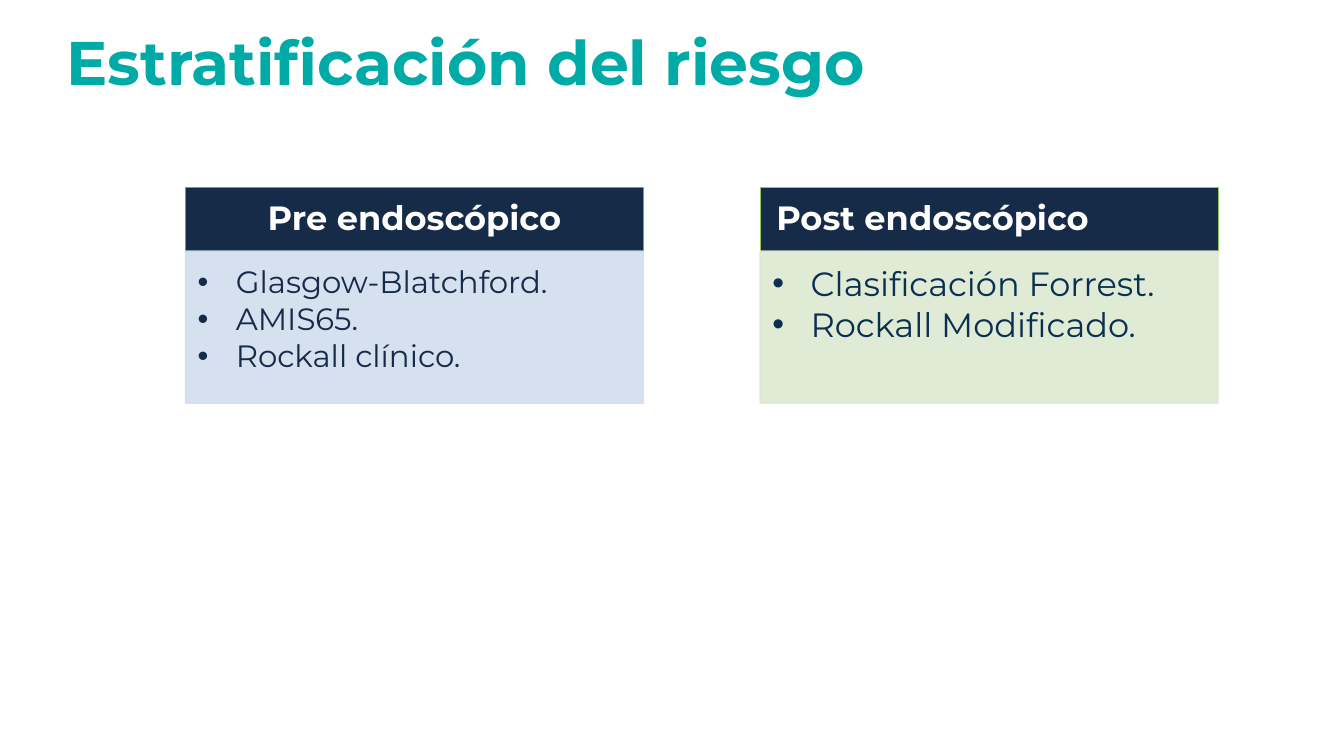
from lxml import etree
from pptx import Presentation, util as u
from pptx.dml.color import RGBColor
from pptx.enum import text as t
from pptx.oxml.ns import qn

TEAL = RGBColor(0x00, 0xAA, 0xA7)
NAVY = RGBColor(0x15, 0x2B, 0x48)
INK = RGBColor(0x0B, 0x2F, 0x51)
WHITE = RGBColor(0xFF, 0xFF, 0xFF)
BLUE = RGBColor(0x5B, 0x9B, 0xD5)
GREEN = RGBColor(0x95, 0xC5, 0x57)
SKY = RGBColor(0xD2, 0xDE, 0xEF)
MINT = RGBColor(0xDC, 0xE9, 0xD1)
LEFT, MID = t.PP_ALIGN.LEFT, t.PP_ALIGN.CENTER


def bullet(para):
    props = para._p.get_or_add_pPr()
    props.set("marL", str(u.Inches(0.38)))
    props.set("indent", str(-u.Inches(0.38)))
    etree.SubElement(props, qn("a:buFont")).set("typeface", "Arial")
    etree.SubElement(props, qn("a:buChar")).set("char", "•")


def write(frame, *lines, size=24, color=NAVY, bold=False, align=LEFT,
          space=1.0, anchor=t.MSO_ANCHOR.MIDDLE, pads=(0.1, 0.05, 0.1, 0.05),
          dots=False):
    frame.word_wrap = True
    frame.auto_size = t.MSO_AUTO_SIZE.NONE
    frame.vertical_anchor = anchor
    (frame.margin_left, frame.margin_top,
     frame.margin_right, frame.margin_bottom) = map(u.Inches, pads)
    for i, line in enumerate(lines):
        para = frame.paragraphs[0] if i == 0 else frame.add_paragraph()
        if dots:
            bullet(para)
        para.alignment, para.line_spacing = align, space
        para.space_before = u.Pt(0)
        run = para.add_run()
        run.text = line
        font = run.font
        font.name, font.size, font.bold = "Montserrat", u.Pt(size), bold
        font.color.rgb = color


class Deck:
    """Places the layout's placeholders by percent of the slide."""

    def __init__(self):
        self.prs = Presentation()
        self.prs.slide_width = u.Inches(13.33)
        self.prs.slide_height = u.Inches(7.5)
        # Comparison layout: a title, two headings and two lists
        self.slide = self.prs.slides.add_slide(self.prs.slide_layouts[4])

    def place(self, idx, x, y, w, h):
        item = self.slide.placeholders[idx]
        wide, high = self.prs.slide_width, self.prs.slide_height
        item.left, item.width = int(wide * x / 100), int(wide * w / 100)
        item.top, item.height = int(high * y / 100), int(high * h / 100)
        return item

    def paint(self, item, fill, line, width, alpha=None):
        item.fill.solid()
        item.fill.fore_color.rgb = fill
        item.line.color.rgb = line
        item.line.width = u.Pt(width)
        if alpha:
            for tone in item._element.spPr.iter(qn("a:srgbClr")):
                etree.SubElement(tone, qn("a:alpha")).set("val", str(alpha * 1000))

    def title(self, words):
        item = self.place(0, 4.2, 0, 68.2, 17.47)
        write(item.text_frame, words, size=44, color=TEAL, bold=True, space=0.9)

    def head(self, idx, words, x, w, edge, align):
        item = self.place(idx, x, 24.8, w, 8.4)
        self.paint(item, NAVY, edge, 0.5)
        write(item.text_frame, words, color=WHITE, bold=True, align=align,
              space=0.9, pads=(0.16, 0.09, 0.16, 0.09))

    def list(self, idx, lines, x, w, fill, size, color):
        item = self.place(idx, x, 33.2, w, 20.13)
        self.paint(item, fill, fill, 1, alpha=90)
        write(item.text_frame, *lines, size=size, color=color, dots=True,
              anchor=t.MSO_ANCHOR.TOP, pads=(0.12, 0.12, 0.16, 0.17))


def main():
    deck = Deck()
    deck.title("Estratificación del riesgo")

    # Two cards side by side
    cards = [
        ("Pre endoscópico", MID, BLUE, SKY, 22, NAVY,
         ["Glasgow-Blatchford.", "AMIS65.", "Rockall clínico."]),
        ("Post endoscópico", LEFT, GREEN, MINT, 24, INK,
         ["Clasificación Forrest.", "Rockall Modificado."]),
    ]
    start, step, wide = 13.8, 42.76, 34.06
    for i, (name, align, edge, fill, size, color, lines) in enumerate(cards):
        x = start + i * step
        deck.head(2 * i + 1, name, x, wide, edge, align)
        deck.list(2 * i + 2, lines, x, wide, fill, size, color)

    deck.prs.save("out.pptx")


if __name__ == "__main__":
    main()
